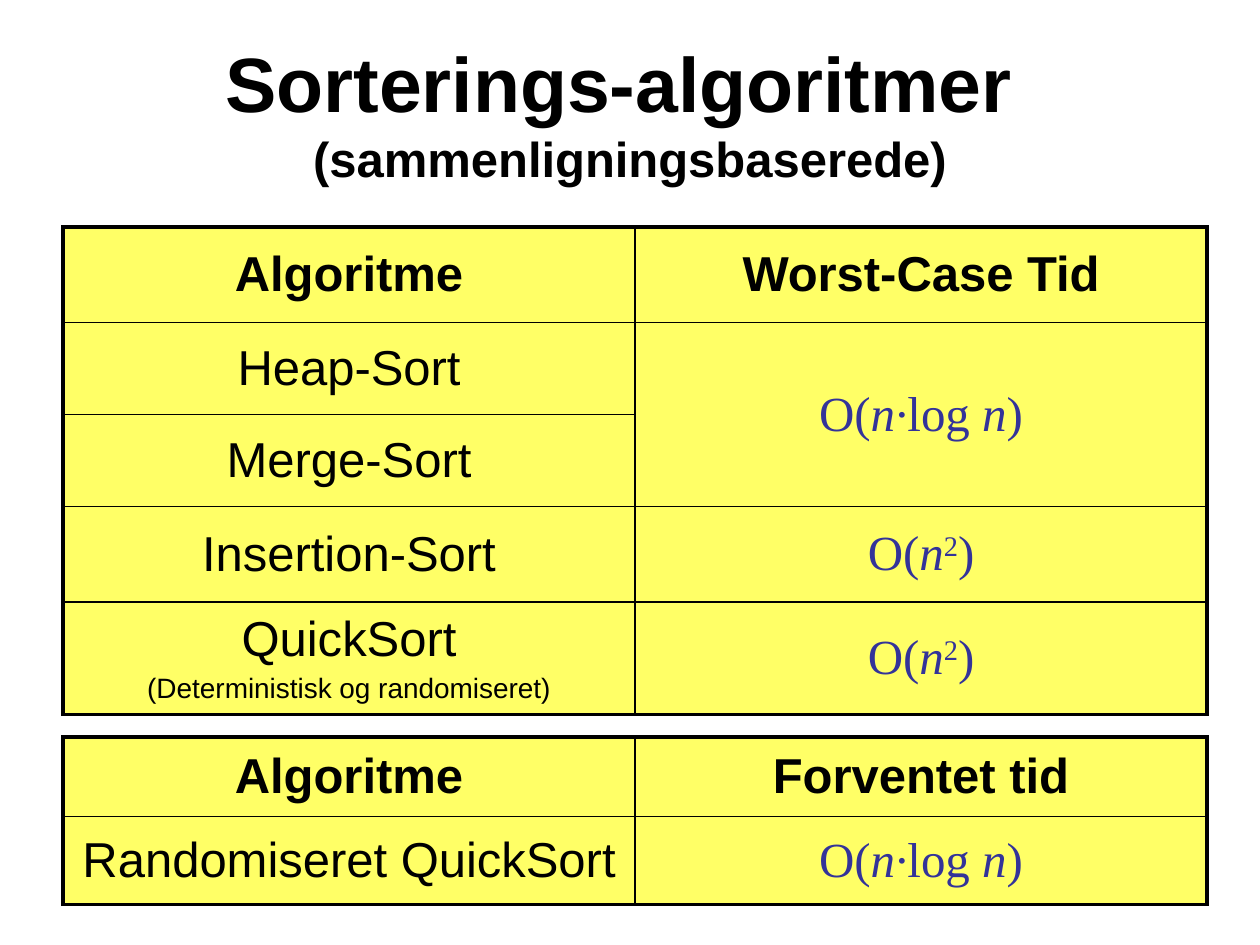
from lxml import etree
from pptx import Presentation
from pptx.dml.color import RGBColor
from pptx.enum.text import MSO_ANCHOR, PP_ALIGN
from pptx.oxml.ns import qn
from pptx.util import Inches, Pt

BLACK = RGBColor(0x00, 0x00, 0x00)
BLUE = RGBColor(0x33, 0x33, 0x99)
YELLOW = RGBColor(0xFF, 0xFF, 0x66)
CENTER = PP_ALIGN.CENTER
MIDDLE = MSO_ANCHOR.MIDDLE
SANS, SERIF = "Arial", "Times New Roman"
BODY, NOTE, HEADING = 28, 16, 44
OUTER, INNER = Pt(2.25), Pt(1)

N_LOG_N = [("O(", ""), ("n·", "italic"), ("log ", ""), ("n", "italic"), (")", "")]
N_SQUARED = [("O(", ""), ("n", "italic"), ("2", "super"), (")", "")]

WORST_CASE = [
    ("Algoritme", "Worst-Case Tid"),
    ("Heap-Sort", N_LOG_N),
    ("Merge-Sort", None),
    ("Insertion-Sort", N_SQUARED),
    ("QuickSort\n(Deterministisk og randomiseret)", N_SQUARED),
]
EXPECTED = [
    ("Algoritme", "Forventet tid"),
    ("Randomiseret QuickSort", N_LOG_N),
]


def style_paragraph(para, name, size, color, bold=False):
    para.alignment = CENTER
    para.font.name = name
    para.font.size = Pt(size)
    para.font.color.rgb = color
    para.font.bold = bold


def add_title(page, box, heading, subheading):
    frame = page.shapes.add_textbox(*box).text_frame
    frame.word_wrap = True
    frame.vertical_anchor = MIDDLE
    para = frame.paragraphs[0]
    style_paragraph(para, SANS, HEADING, BLACK, True)
    para.add_run().text = heading
    para.add_line_break()
    span = para.add_run()
    span.text = subheading
    span.font.size = Pt(BODY)


def set_borders(cell, widths):
    properties = cell._tc.get_or_add_tcPr()
    for side, width in zip("LRTB", widths):
        line = etree.SubElement(properties, qn(f"a:ln{side}"), w=str(width))
        fill = etree.SubElement(line, qn("a:solidFill"))
        etree.SubElement(fill, qn("a:srgbClr"), val=str(BLACK))


def write_label(frame, text, bold):
    for index, line in enumerate(text.split("\n")):
        para = frame.paragraphs[0] if index == 0 else frame.add_paragraph()
        size = NOTE if index else BODY
        style_paragraph(para, SANS, size, BLACK, bold)
        para.space_before = Pt(size * 0.2)
        para.add_run().text = line


def write_formula(frame, parts):
    para = frame.paragraphs[0]
    style_paragraph(para, SERIF, BODY, BLUE)
    para.space_before = Pt(BODY * 0.2)
    for text, kind in parts:
        span = para.add_run()
        span.text = text
        if kind == "italic":
            span.font.italic = True
        elif kind == "super":
            span._r.get_or_add_rPr().set("baseline", "30000")


def add_time_table(page, box, rows, weights):
    left, top, width, height = box
    table = page.shapes.add_table(len(rows), 2, left, top, width, height).table
    table.first_row = table.horz_banding = False
    last = len(rows) - 1
    for row, weight in zip(table.rows, weights):
        row.height = int(height * weight / sum(weights))
    for r, contents in enumerate(rows):
        for c, content in enumerate(contents):
            cell = table.cell(r, c)
            edges = (c == 0, c == 1, r == 0, r == last)
            set_borders(cell, [OUTER if edge else INNER for edge in edges])
            cell.fill.solid()
            cell.fill.fore_color.rgb = YELLOW
            cell.vertical_anchor = MIDDLE
            if content is None:
                table.cell(r - 1, c).merge(cell)
            elif isinstance(content, str):
                write_label(cell.text_frame, content, r == 0)
            else:
                write_formula(cell.text_frame, content)


def main():
    deck = Presentation()
    deck.slide_width, deck.slide_height = Inches(10), Inches(7.5)
    page = deck.slides.add_slide(deck.slide_layouts[6])
    left, width = Inches(0.5), Inches(9.08)
    add_title(page, (0, Inches(0.05), deck.slide_width, Inches(1.67)),
              "Sorterings-algoritmer ", "(sammenligningsbaserede)")
    add_time_table(page, (left, Inches(1.8), width, Inches(3.87)),
                   WORST_CASE, (76, 73, 73, 76, 89))
    add_time_table(page, (left, Inches(5.85), width, Inches(1.33)),
                   EXPECTED, (63, 70))
    deck.save("out.pptx")


if __name__ == "__main__":
    main()
